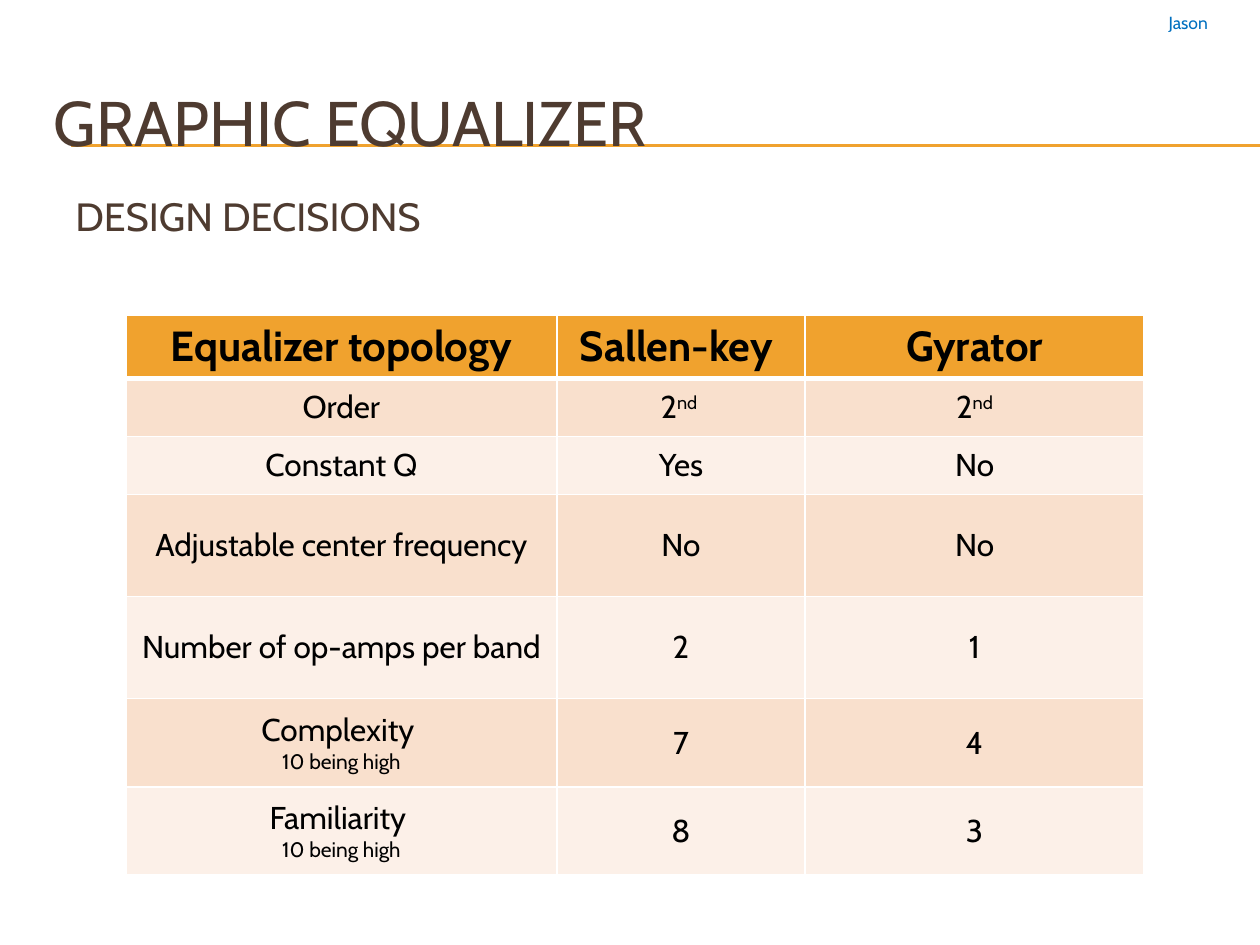
"""Build the graphic equalizer design decisions slide."""
from lxml import etree
from pptx import Presentation, util as u
from pptx.dml.color import RGBColor
from pptx.enum import shapes, text
from pptx.oxml.ns import qn

FONT = "Cabin"
WHITE = RGBColor(0xFF, 0xFF, 0xFF)
BLACK = RGBColor(0, 0, 0)
BROWN = RGBColor(0x4E, 0x3B, 0x30)
BLUE = RGBColor(0x00, 0x70, 0xC0)
ORANGE = RGBColor(0xF0, 0xA2, 0x2E)
BANDS = RGBColor(0xF9, 0xE0, 0xCD), RGBColor(0xFC, 0xF0, 0xE8)

WIDTH, HEIGHT = 10, 7.5
RULE_TOPS = 1.15, 1.16
LEFT, CENTER = text.PP_ALIGN.LEFT, text.PP_ALIGN.CENTER
TOP, MIDDLE = text.MSO_ANCHOR.TOP, text.MSO_ANCHOR.MIDDLE
LABELS = [
    ("GRAPHIC EQUALIZER", (0.33, 0.5, 9.5, 0.92), 36, BROWN, LEFT, MIDDLE),
    ("DESIGN DECISIONS", (0.5, 1.5, 9.5, 0.42), 22.5, BROWN, LEFT, MIDDLE),
    ("Jason", (8.89, 0.05, 1.08, 0.27), 10, BLUE, CENTER, TOP),
]

TABLE_BOX = 1, 2.5, 8.08, 4.45
COLUMN_WIDTHS = 3.42, 1.97, 2.69
ROW_HEIGHTS = 0.46, 0.46, 0.46, 0.81, 0.81, 0.7, 0.7
SCALE_NOTE = "10 being high"
ROWS = [
    ("Equalizer topology", "Sallen-key ", "Gyrator"),
    ("Order", ("2", "nd "), ("2", "nd")),
    ("Constant Q", "Yes", "No"),
    ("Adjustable center frequency", "No", "No"),
    ("Number of op-amps per band", "2", "1"),
    ("Complexity \n" + SCALE_NOTE, "7", "4"),
    ("Familiarity \n" + SCALE_NOTE, "8", "3"),
]


def style_run(run, size, color, bold=False):
    font = run.font
    font.name, font.size, font.bold = FONT, u.Pt(size), bold
    font.color.rgb = color


def add_rule(slide, top):
    rule = slide.shapes.add_connector(
        shapes.MSO_CONNECTOR.STRAIGHT,
        u.Inches(0.56), u.Inches(top), u.Inches(WIDTH), u.Inches(top))
    rule.line.color.rgb = ORANGE
    rule.line.width = u.Pt(0.75)
    etree.SubElement(rule._element.spPr, qn("a:effectLst"))


def add_label(slide, wording, box, size, color, alignment, anchor):
    frame = slide.shapes.add_textbox(*map(u.Inches, box)).text_frame
    frame.word_wrap = True
    frame.vertical_anchor = anchor
    frame.text = wording
    paragraph = frame.paragraphs[0]
    paragraph.alignment = alignment
    style_run(paragraph.runs[0], size, color)


def set_borders(cell, bottom_width):
    properties = cell._tc.get_or_add_tcPr()
    for side, width in zip("LRTB", (1, 1, 1, bottom_width)):
        line = etree.SubElement(properties, qn(f"a:ln{side}"), w=str(u.Pt(width)))
        fill = etree.SubElement(line, qn("a:solidFill"))
        etree.SubElement(fill, qn("a:srgbClr"), val=str(WHITE))


def fill_cell(cell, content, row):
    header = row == 0
    set_borders(cell, 3 if header else 1)
    cell.fill.solid()
    cell.fill.fore_color.rgb = ORANGE if header else BANDS[(row - 1) % 2]
    cell.vertical_anchor = TOP if header else MIDDLE
    base, superscript = content if isinstance(content, tuple) else (content, "")
    frame = cell.text_frame
    frame.text = base
    if superscript:
        run = frame.paragraphs[0].add_run()
        run.text = superscript
        run._r.get_or_add_rPr().set("baseline", "30000")
    for paragraph in frame.paragraphs:
        paragraph.alignment = CENTER
        for run in paragraph.runs:
            size = 24 if header else 12 if run.text == SCALE_NOTE else 18
            style_run(run, size, BLACK, header)


def add_comparison(slide):
    table = slide.shapes.add_table(
        len(ROWS), len(COLUMN_WIDTHS), *map(u.Inches, TABLE_BOX)).table
    for column, width in zip(table.columns, COLUMN_WIDTHS):
        column.width = u.Inches(width)
    for row, (height, contents) in enumerate(zip(ROW_HEIGHTS, ROWS)):
        table.rows[row].height = u.Inches(height)
        for column, content in enumerate(contents):
            fill_cell(table.cell(row, column), content, row)


def main():
    presentation = Presentation()
    presentation.slide_width = u.Inches(WIDTH)
    presentation.slide_height = u.Inches(HEIGHT)
    slide = presentation.slides.add_slide(presentation.slide_layouts[6])
    for top in RULE_TOPS:
        add_rule(slide, top)
    add_comparison(slide)
    for label in LABELS:
        add_label(slide, *label)
    presentation.save("out.pptx")


if __name__ == "__main__":
    main()
